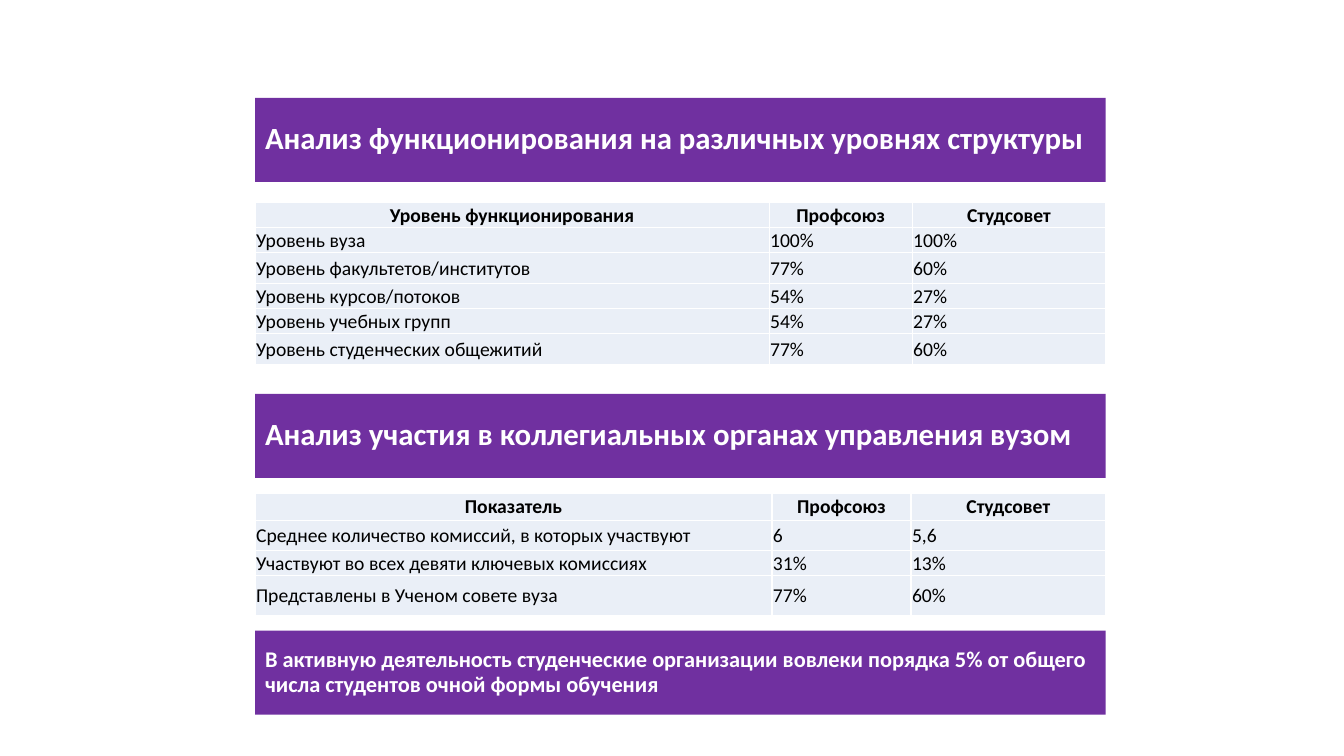
from dataclasses import dataclass

from lxml.etree import SubElement
from pptx import Presentation
from pptx.dml.color import RGBColor
from pptx.enum.shapes import MSO_SHAPE as Shape
from pptx.enum.text import MSO_ANCHOR as Anchor, PP_ALIGN as Align
from pptx.oxml.ns import qn
from pptx.util import Pt


@dataclass(frozen=True)
class Theme:
    """Colours, font and type sizes of the slide."""
    font: str = "Calibri"
    purple: str = "7030A0"
    pale: str = "EAEFF7"
    white: str = "FFFFFF"
    black: str = "000000"
    heading: float = 22
    summary: float = 16
    body: float = 14


THEME = Theme()
LEFT, WIDTH, BAND_HEIGHT = 182.2, 607.6, 60

LEVELS = [
    ("Уровень функционирования", "Профсоюз", "Студсовет"),
    ("Уровень вуза", "100%", "100%"),
    ("Уровень факультетов/институтов", "77%", "60%"),
    ("Уровень курсов/потоков", "54%", "27%"),
    ("Уровень учебных групп", "54%", "27%"),
    ("Уровень студенческих общежитий", "77%", "60%"),
]
GOVERNANCE = [
    ("Показатель", "Профсоюз", "Студсовет"),
    ("Среднее количество комиссий, в которых участвуют", "6", "5,6"),
    ("Участвуют во всех девяти ключевых комиссиях", "31%", "13%"),
    ("Представлены в Ученом совете вуза", "77%", "60%"),
]


def write(frame, text, *, size, color, bold=False, align=Align.LEFT, spacing=1.0):
    """Put one formatted paragraph into a text frame."""
    frame.word_wrap = True
    paragraph = frame.paragraphs[0]
    paragraph.alignment = align
    paragraph.line_spacing = spacing
    run = paragraph.add_run()
    run.text = text
    run.font.name = THEME.font
    run.font.size = Pt(size)
    run.font.bold = bold
    run.font.color.rgb = RGBColor.from_string(color)


def add_band(slide, top, text, size):
    """Add a full-width purple band with white bold text."""
    band = slide.shapes.add_shape(
        Shape.RECTANGLE, Pt(LEFT), Pt(top), Pt(WIDTH), Pt(BAND_HEIGHT))
    band.shadow.inherit = False
    band.fill.solid()
    band.fill.fore_color.rgb = RGBColor.from_string(THEME.purple)
    band.line.fill.background()
    band.text_frame.vertical_anchor = Anchor.MIDDLE
    write(band.text_frame, text, size=size, color=THEME.white, bold=True, spacing=0.9)


def add_borders(cell):
    """Draw thin white lines on all four sides of a cell."""
    properties = cell._tc.get_or_add_tcPr()
    for side in ("a:lnL", "a:lnR", "a:lnT", "a:lnB"):
        line = SubElement(properties, qn(side), w=str(Pt(1)))
        fill = SubElement(line, qn("a:solidFill"))
        SubElement(fill, qn("a:srgbClr"), val=THEME.white)


def fill_cell(cell, text, is_header):
    """Format one table cell and write its text."""
    add_borders(cell)
    cell.fill.solid()
    cell.fill.fore_color.rgb = RGBColor.from_string(THEME.pale)
    cell.margin_left = cell.margin_right = cell.margin_top = Pt(0.7)
    cell.margin_bottom = Pt(0)
    cell.vertical_anchor = Anchor.MIDDLE
    write(cell.text_frame, text, size=THEME.body, color=THEME.black, bold=is_header,
          align=Align.CENTER if is_header else Align.JUSTIFY)


def add_data_table(slide, top, records, widths, heights):
    """Add a table whose first record is the header."""
    table = slide.shapes.add_table(
        len(records), len(widths), Pt(LEFT), Pt(top), Pt(WIDTH), Pt(sum(heights))).table
    table.first_row = table.horz_banding = False
    for column, width in zip(table.columns, widths):
        column.width = Pt(width)
    for row_index, (row, height, record) in enumerate(zip(table.rows, heights, records)):
        row.height = Pt(height)
        for cell, text in zip(row.cells, record):
            fill_cell(cell, text, row_index == 0)


def main():
    """Build the slide and save it."""
    deck = Presentation()
    deck.slide_width, deck.slide_height = Pt(960), Pt(540)
    slide = deck.slides.add_slide(deck.slide_layouts[6])

    add_band(slide, 69.9, "Анализ функционирования на различных уровнях структуры",
             THEME.heading)
    add_data_table(slide, 144.8, LEVELS, (367.2, 102.2, 138.2),
                   (17.5, 17.5, 22.3, 17.5, 17.5, 22.3))
    add_band(slide, 281.3, "Анализ участия в коллегиальных органах управления вузом",
             THEME.heading)
    add_data_table(slide, 352.2, GOVERNANCE, (369.2, 99.4, 139),
                   (19.4, 21.6, 17.5, 28.6))
    add_band(slide, 450.5,
             "В активную деятельность студенческие организации вовлеки порядка 5% "
             "от общего числа студентов очной формы обучения", THEME.summary)
    deck.save("out.pptx")


if __name__ == "__main__":
    main()
